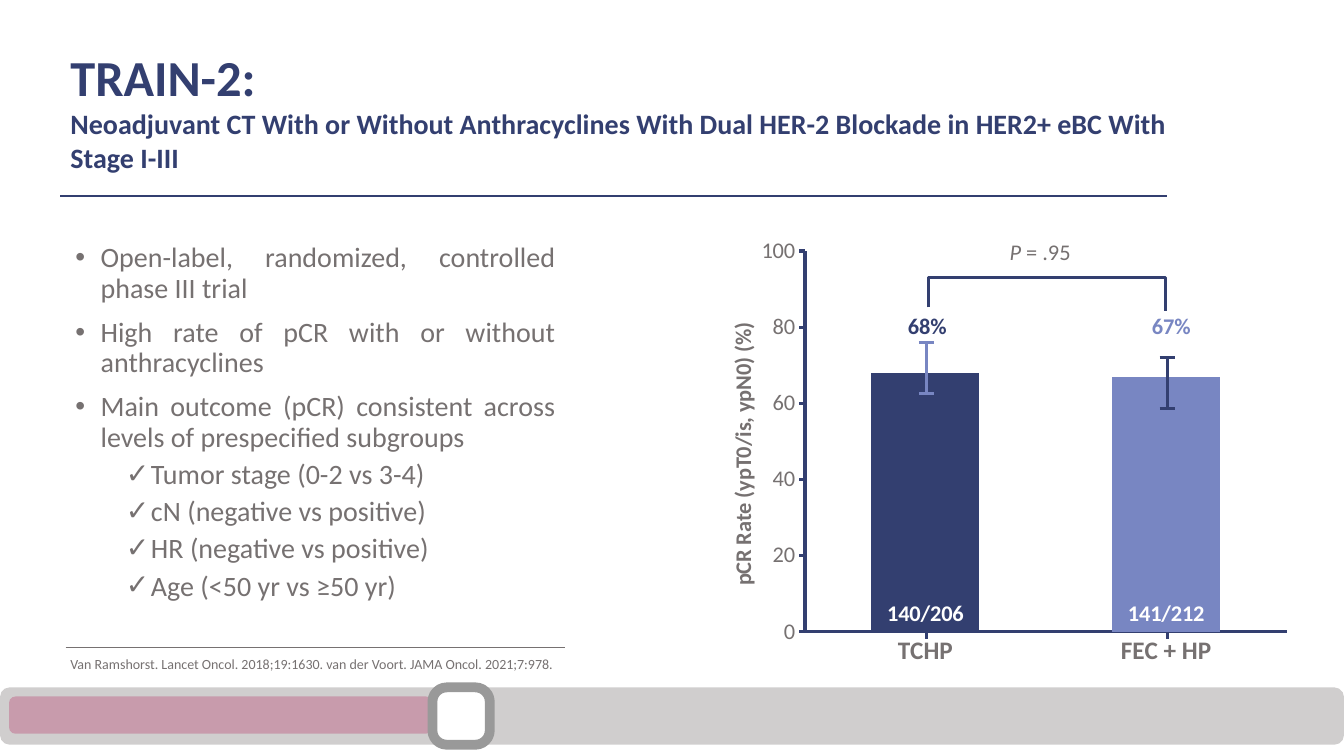
"""Build the TRAIN-2 slide with its study notes and pCR bar chart."""
from lxml import etree
from pptx import Presentation
from pptx.chart.data import CategoryChartData
from pptx.dml.color import RGBColor
from pptx.enum.chart import XL_CHART_TYPE, XL_LABEL_POSITION, XL_TICK_MARK
from pptx.enum.shapes import MSO_CONNECTOR, MSO_SHAPE
from pptx.enum.text import MSO_ANCHOR, PP_ALIGN
from pptx.oxml.ns import qn
from pptx.util import Pt

BARS = XL_CHART_TYPE.COLUMN_CLUSTERED
BASE = XL_LABEL_POSITION.INSIDE_BASE
OUT, NONE = XL_TICK_MARK.OUTSIDE, XL_TICK_MARK.NONE
STRAIGHT = MSO_CONNECTOR.STRAIGHT
ROUND = MSO_SHAPE.ROUNDED_RECTANGLE
TOP, MIDDLE, BOTTOM = MSO_ANCHOR.TOP, MSO_ANCHOR.MIDDLE, MSO_ANCHOR.BOTTOM
LEFT, CENTER, JUSTIFY = PP_ALIGN.LEFT, PP_ALIGN.CENTER, PP_ALIGN.JUSTIFY


class Theme:
    font = "Calibri"
    navy = RGBColor(0x33, 0x3F, 0x70)
    blue = RGBColor(0x78, 0x86, 0xC2)
    gray = RGBColor(0x76, 0x71, 0x71)
    white = RGBColor(0xFF, 0xFF, 0xFF)
    track = RGBColor(0xD0, 0xCE, 0xCE)
    pink = RGBColor(0xB7, 0x26, 0x5F)
    rim = RGBColor(0x99, 0x99, 0x99)
    title, body, group, label, note = 36, 20, 18, 16, 10


def style(font, size, color, bold=False):
    font.name, font.size, font.bold = Theme.font, Pt(size), bold
    font.color.rgb = color


def rule(x1, y1, x2, y2, color, width=2.25):
    line = slide.shapes.add_connector(STRAIGHT, Pt(x1), Pt(y1), Pt(x2), Pt(y2))
    line.line.color.rgb = color
    line.line.width = Pt(width)
    etree.SubElement(line._element.spPr, qn("a:effectLst"))


deck = Presentation()
deck.slide_width, deck.slide_height = Pt(960), Pt(540)
slide = deck.slides.add_slide(deck.slide_layouts[6])

points = [
    (0, "Open-label, randomized, controlled phase III trial"),
    (0, "High rate of pCR with or without anthracyclines"),
    (0, "Main outcome (pCR) consistent across levels of prespecified subgroups"),
    (1, "Tumor stage (0-2 vs 3-4)"),
    (1, "cN (negative vs positive)"),
    (1, "HR (negative vs positive)"),
    (1, "Age (<50 yr vs ≥50 yr)"),
]
frame = slide.shapes.add_textbox(Pt(46.8), Pt(170.6), Pt(357), Pt(271.4)).text_frame
frame.word_wrap = True
frame.text = "\n".join(text for level, text in points)
for i, (para, (level, text)) in enumerate(zip(frame.paragraphs, points)):
    para.level = level
    para.alignment = JUSTIFY
    para.line_spacing = 0.9
    para.space_before = Pt((10, 5)[level] if i else 0)
    props = para._p.get_or_add_pPr()
    props.set("marL", str(Pt((18, 54)[level])))
    props.set("indent", str(Pt(-18)))
    etree.SubElement(props, qn("a:buFont"), typeface="Arial")
    etree.SubElement(props, qn("a:buChar"), char="•✓"[level])
    style(para.runs[0].font, Theme.body, Theme.gray)

arms = [
    ("TCHP", 68, "140/206", Theme.navy),
    ("FEC + HP", 67, "141/212", Theme.blue),
]
left, top, wide, high = 504, 158, 425, 332
plot_x, plot_y, plot_w, plot_h = 575, 179.3, 344, 272
floor = plot_y + plot_h

data = CategoryChartData()
data.categories = [arm[0] for arm in arms]
data.add_series("pCR rate", [arm[1] for arm in arms])
chart = slide.shapes.add_chart(BARS, Pt(left), Pt(top), Pt(wide), Pt(high), data).chart
chart.has_legend = chart.has_title = False
style(chart.font, Theme.label, Theme.gray)

plot = chart.plots[0]
plot.gap_width = 123
plot.vary_by_categories = False
for i, (name, rate, count, color) in enumerate(arms):
    bar = plot.series[0].points[i]
    bar.format.fill.solid()
    bar.format.fill.fore_color.rgb = color
    tag = bar.data_label
    tag.text_frame.text = count
    style(tag.text_frame.paragraphs[0].runs[0].font, Theme.label, Theme.white, True)
    tag.position = BASE

rates, groups = chart.value_axis, chart.category_axis
rates.minimum_scale, rates.maximum_scale, rates.major_unit = 0, 100, 20
rates.has_major_gridlines = False
rates.major_tick_mark, groups.major_tick_mark = OUT, NONE
style(rates.tick_labels.font, Theme.label, Theme.gray)
style(groups.tick_labels.font, Theme.group, Theme.gray, True)
for axis in (rates, groups):
    axis.format.line.color.rgb = Theme.navy
    axis.format.line.width = Pt(2.25)

title = rates.axis_title
title.text_frame.text = "pCR Rate (ypT0/is, ypN0) (%)"
style(title.text_frame.paragraphs[0].runs[0].font, Theme.label, Theme.gray, True)
turn = title.text_frame._txBody.find(qn("a:bodyPr"))
turn.set("rot", "-5400000")
turn.set("vert", "horz")

area = chart._chartSpace.chart.plotArea
inner = [("layoutTarget", "inner"), ("xMode", "edge"), ("yMode", "edge"),
         ("x", (plot_x - left) / wide), ("y", (plot_y - top) / high),
         ("w", plot_w / wide), ("h", plot_h / high)]
edge = [("xMode", "edge"), ("yMode", "edge"), ("x", 0.03), ("y", 0.21)]
for owner, spot, values in ((area, 0, inner), (title._element, 1, edge)):
    layout = owner.find(qn("c:layout"))
    if layout is None:
        layout = etree.Element(qn("c:layout"))
        owner.insert(spot, layout)
    manual = etree.SubElement(layout, qn("c:manualLayout"))
    for key, value in values:
        etree.SubElement(manual, qn("c:" + key), val=str(value))

spans = [(661.7, 244.8, Theme.blue), (833.8, 255.6, Theme.navy)]
for x, y, color in spans:
    rule(x, y, x, y + 36, color)
    for cap in (y, y + 36):
        rule(x - 5.4, cap, x + 5.4, cap, color)
    rule(x, floor, x, floor + 5, Theme.navy)

pen = slide.shapes.build_freeform(Pt(663), Pt(219.6))
pen.add_line_segments(
    [(Pt(663), Pt(198)), (Pt(832.3), Pt(198)), (Pt(832.3), Pt(222.5))], close=False)
brace = pen.convert_to_shape()
brace.shadow.inherit = False
brace.fill.background()
brace.line.color.rgb = Theme.navy
brace.line.width = Pt(2.25)

texts = [
    (635, 219.6, 54.7, 26.6, ["68%"], [Theme.label], Theme.navy, True, CENTER, TOP),
    (809.3, 219.6, 54.7, 26.6, ["67%"], [Theme.label], Theme.blue, True, CENTER, TOP),
    (660.2, 166.3, 165.6, 26.6, ["P = .95"], [Theme.label], Theme.gray, False, CENTER, TOP),
    (43.2, 28.8, 813, 99.4,
     ["TRAIN-2:", "Neoadjuvant CT With or Without Anthracyclines With Dual HER-2 "
      "Blockade in HER2+ eBC With Stage I-III"],
     [Theme.title, Theme.body], Theme.navy, True, LEFT, MIDDLE),
    (43.2, 464.4, 415.4, 19.4,
     ["Van Ramshorst. Lancet Oncol. 2018;19:1630. van der Voort. JAMA Oncol. 2021;7:978."],
     [Theme.note], Theme.gray, False, LEFT, BOTTOM),
]
for x, y, w, h, lines, sizes, color, bold, align, anchor in texts:
    frame = slide.shapes.add_textbox(Pt(x), Pt(y), Pt(w), Pt(h)).text_frame
    frame.word_wrap = True
    frame.vertical_anchor = anchor
    frame.text = "\n".join(lines)
    for para, size in zip(frame.paragraphs, sizes):
        para.alignment = align
        if para.text.startswith("P ="):
            para.runs[0].text = "P"
            para.add_run().text = " = .95"
        for run in para.runs:
            style(run.font, size, color, bold)
            run.font.italic = run.text == "P"

rule(43.2, 139.7, 833.8, 139.7, Theme.navy, 1.5)
rule(46.8, 462.2, 403.9, 462.2, Theme.gray, 0.75)

knobs = [
    (0, 491, 960, 41, Theme.track, 0.17),
    (6.5, 497.5, 302.4, 26.6, Theme.pink, 0.17),
    (308.9, 491, 41, 41, Theme.white, 0.25),
]
for x, y, w, h, color, bend in knobs:
    shape = slide.shapes.add_shape(ROUND, Pt(x), Pt(y), Pt(w), Pt(h))
    shape.shadow.inherit = False
    shape.adjustments[0] = bend
    shape.fill.solid()
    shape.fill.fore_color.rgb = color
    shape.line.fill.background()
    if color == Theme.pink:
        tint = shape._element.spPr.find(".//" + qn("a:srgbClr"))
        etree.SubElement(tint, qn("a:alpha"), val="30000")
    if color == Theme.white:
        shape.line.color.rgb = Theme.rim
        shape.line.width = Pt(7)

deck.save("out.pptx")
